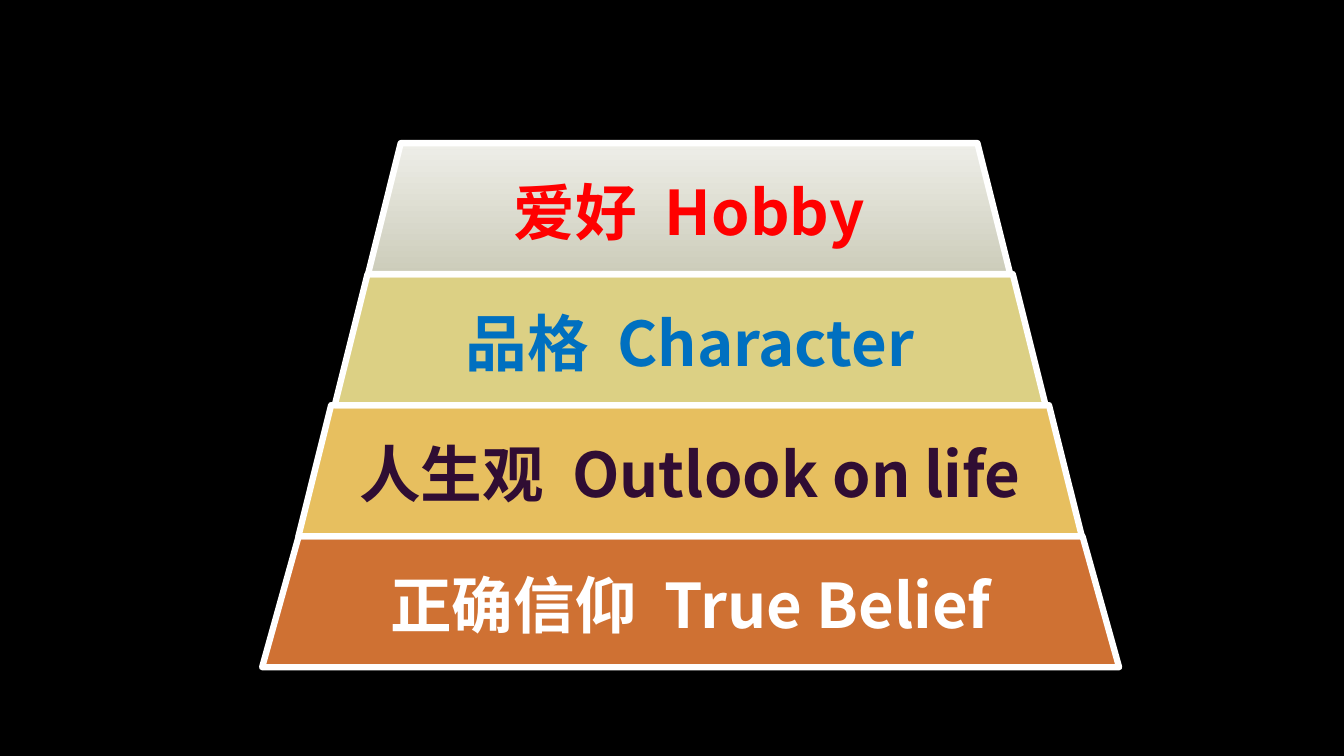
from dataclasses import dataclass

from pptx import Presentation
from pptx.dml.color import RGBColor
from pptx.enum.shapes import MSO_SHAPE
from pptx.enum.text import MSO_ANCHOR, PP_ALIGN
from pptx.oxml import parse_xml
from pptx.oxml.ns import nsdecls
from pptx.util import Inches, Pt

FONT = "Noto Sans CJK JP"
PYRAMID_TOP = 1.42
LAYER_HEIGHT = 1.3


@dataclass
class Layer:
    chinese: str
    english: str
    left: float
    width: float
    fills: tuple[str, ...]
    text_color: str
    slant: float = 0.25


# Layers from top to bottom; two fill colours make a gradient
LAYERS = [
    Layer("爱好", "Hobby", 3.65, 6.37, ("EEEEE8", "CCCCBA"), "FF0000"),
    Layer("品格", "Character", 3.32, 7.05, ("DCD084",), "0070C0"),
    Layer("人生观", "Outlook on life", 2.96, 7.77, ("E7BF5F",), "300D33"),
    Layer("正确信仰", "True Belief", 2.6, 8.5, ("CF7133",), "FFFFFF", 0.279),
]


def color(value: str) -> RGBColor:
    return RGBColor.from_string(value)


def add_text(para, text: str, *, size: float, text_color: str,
             bold: bool = False, spacing: float = 0) -> None:
    span = para.add_run()
    span.text = text
    span.font.name = FONT
    span.font.size = Pt(size)
    span.font.bold = bold
    span.font.color.rgb = color(text_color)
    properties = span.font._element
    properties.append(parse_xml(f'<a:ea {nsdecls("a")} typeface="{FONT}"/>'))
    if spacing:
        properties.set("spc", str(round(spacing * 100)))


def fill_shape(shape, fills: tuple[str, ...]) -> None:
    if len(fills) == 1:
        shape.fill.solid()
        shape.fill.fore_color.rgb = color(fills[0])
        return
    shape.fill.gradient()
    shape.fill.gradient_angle = 270
    for stop, value in zip(shape.fill.gradient_stops, fills):
        stop.color.rgb = color(value)


def add_layer(page, layer: Layer, top: float) -> None:
    box = page.shapes.add_shape(
        MSO_SHAPE.TRAPEZOID, Inches(layer.left), Inches(top),
        Inches(layer.width), Inches(LAYER_HEIGHT))
    box.adjustments[0] = layer.slant
    box.shadow.inherit = False
    fill_shape(box, layer.fills)
    box.line.color.rgb = color("FFFFFF")
    box.line.width = Pt(4.5)

    # Label, with a widened space between the two languages
    frame = box.text_frame
    frame.word_wrap = True
    frame.vertical_anchor = MSO_ANCHOR.MIDDLE
    para = frame.paragraphs[0]
    para.alignment = PP_ALIGN.CENTER
    for text, spacing in ((layer.chinese, 0), (" ", 10), (layer.english, 0)):
        add_text(para, text, size=44, text_color=layer.text_color,
                 bold=True, spacing=spacing)


def main() -> None:
    deck = Presentation()
    deck.slide_width = Inches(13.33)
    deck.slide_height = Inches(7.5)
    page = deck.slides.add_slide(deck.slide_layouts[6])
    page.background.fill.solid()
    page.background.fill.fore_color.rgb = color("000000")

    # Stack from the base up, so that each layer overlaps the one below
    for index, layer in reversed(list(enumerate(LAYERS))):
        add_layer(page, layer, PYRAMID_TOP + index * LAYER_HEIGHT)

    deck.save("out.pptx")


if __name__ == "__main__":
    main()
